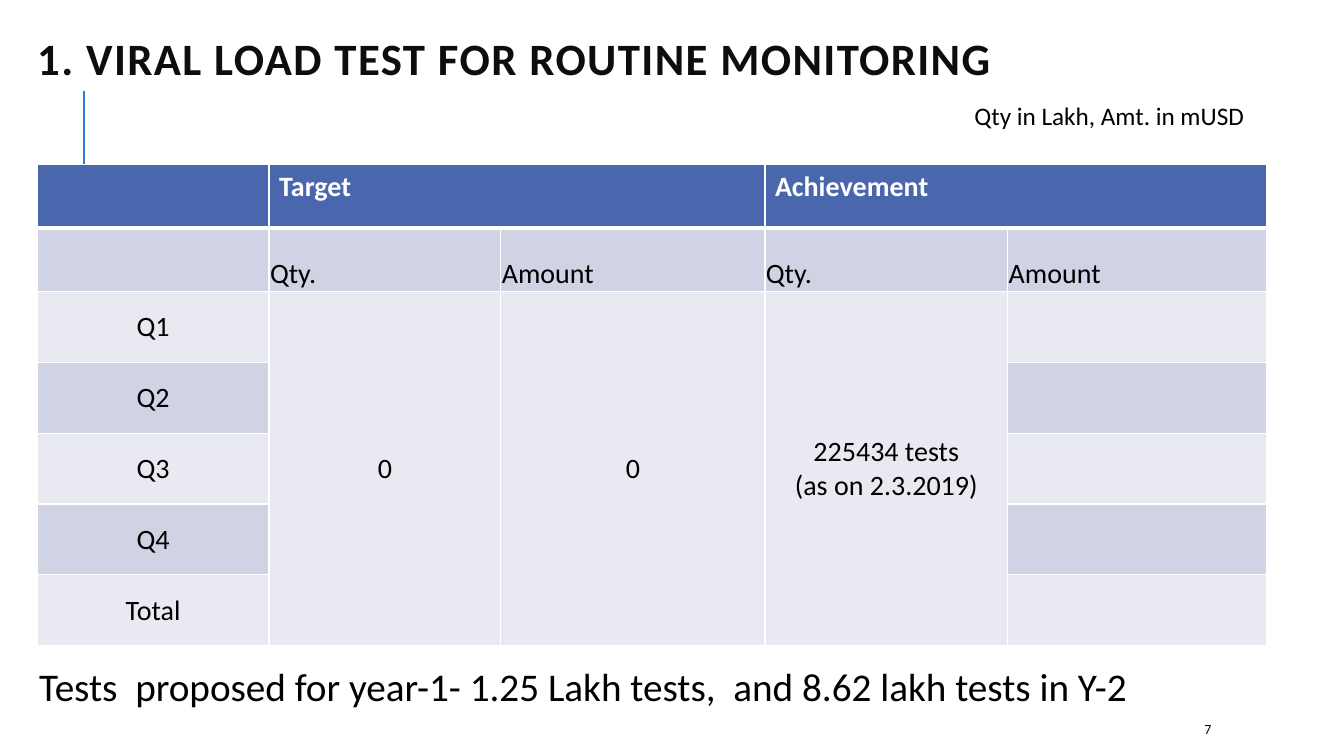
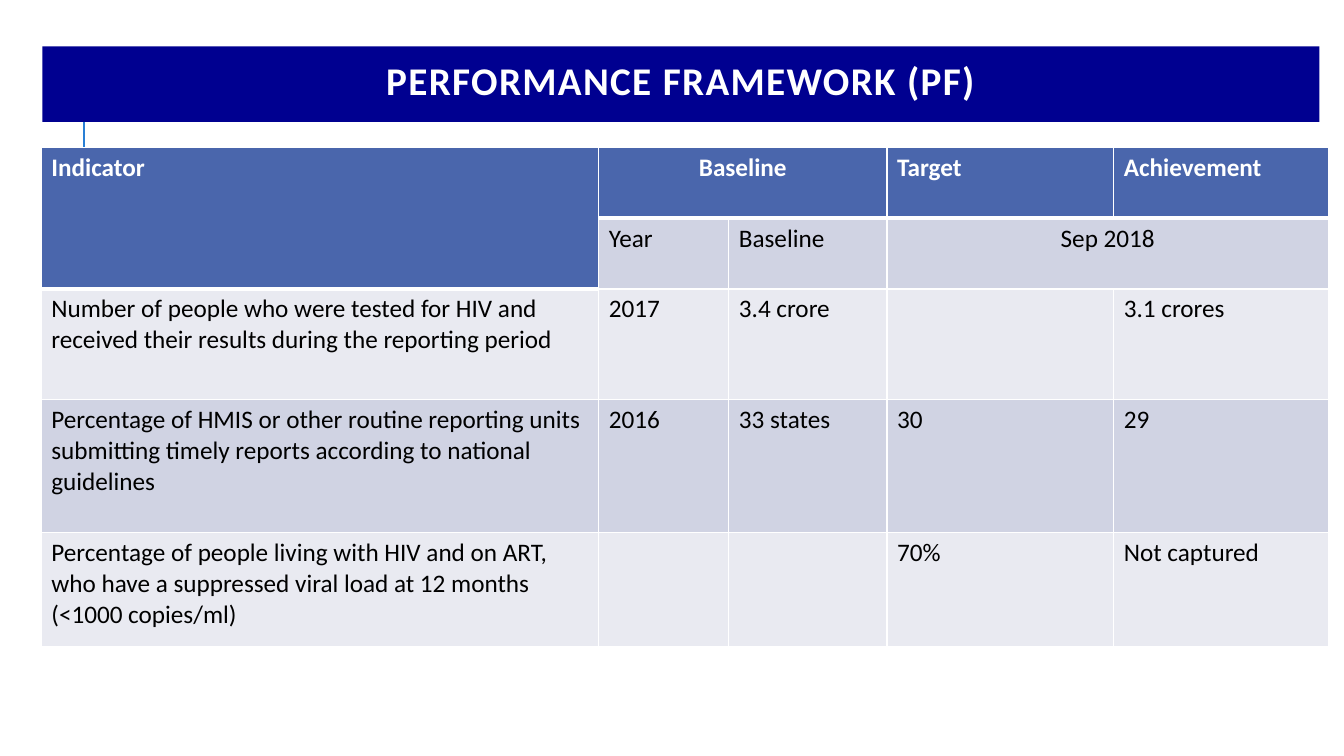
from dataclasses import dataclass

from lxml import etree
from pptx import Presentation
from pptx.dml.color import RGBColor
from pptx.enum import shapes, text
from pptx.oxml import ns
from pptx.util import Pt


# Look of the deck
@dataclass(frozen=True)
class Theme:
    font: str = "Calibri"
    ink: str = "000000"
    soft_ink: str = "0D0D0D"
    white: str = "FFFFFF"
    rule: str = "297FD5"
    banner: str = "000090"
    header: str = "4A66AC"
    bands: tuple = ("E9EAF1", "D0D3E3")
    title: int = 32
    banner_title: int = 28
    summary: int = 28
    large_cell: int = 20
    cell: int = 18
    caption: int = 18
    page_number: int = 10


THEME = Theme()
LEFT, CENTER = text.PP_ALIGN.LEFT, text.PP_ALIGN.CENTER
TOP, MIDDLE, BOTTOM = (text.MSO_ANCHOR.TOP, text.MSO_ANCHOR.MIDDLE,
                       text.MSO_ANCHOR.BOTTOM)

# Cell layouts: anchor, alignment, margins (left, top, right, bottom)
NORMAL = (TOP, LEFT, (7.2, 3.6, 7.2, 3.6))
UNIT = (BOTTOM, LEFT, (0.7, 0.7, 0.7, 0))
FIGURE = (MIDDLE, CENTER, (0.7, 0.7, 0.7, 0))

# Content; every box is left, top, width, height in points
SLIDES = [
    {
        "title": "1. VIRAL LOAD TEST FOR ROUTINE MONITORING",
        "title_box": (19.4, 5.8, 907, 77.8),
        "banner": False,
        "table": {
            "origin": (26.6, 117.4),
            "columns": (165.6, 165.6, 188.6, 173.5, 185),
            "heights": (45.4, 45.4) + (50.6,) * 5,
            "size": THEME.large_cell,
            "layouts": [NORMAL, UNIT] + [FIGURE] * 5,
            "header_depths": (1, 1, 1, 1, 1),
            "centered": (),
            "merges": [(0, 1, 0, 2), (0, 3, 0, 4),
                       (2, 1, 6, 1), (2, 2, 6, 2), (2, 3, 6, 3)],
            "rows": [
                ("", "Target", "", "Achievement", ""),
                ("", "Qty.", "Amount", "Qty.", "Amount"),
                ("Q1", "0", "0", "225434 tests\n(as on 2.3.2019)", ""),
                ("Q2", "", "", "", ""),
                ("Q3", "", "", "", ""),
                ("Q4", "", "", "", ""),
                ("Total", "", "", "", ""),
            ],
        },
        "labels": [
            ("Qty in Lakh, Amt. in mUSD", (689, 68.4, 211.7, 28.8),
             THEME.caption, THEME.ink, TOP),
            ("Tests  proposed for year-1- 1.25 Lakh tests,  and 8.62 lakh tests in Y-2",
             (20.9, 469.4, 882, 41), THEME.summary, THEME.ink, TOP),
            ("7", (853.2, 509.8, 76.3, 21.6),
             THEME.page_number, THEME.soft_ink, MIDDLE),
        ],
    },
    {
        "title": "PERFORMANCE FRAMEWORK (PF)",
        "title_box": (30.2, 33.1, 912.2, 54),
        "banner": True,
        "table": {
            "origin": (29.5, 105.2),
            "columns": (398.2, 92.9, 113, 162, 153.4),
            "heights": (50.6, 50.6, 79.2, 95, 81.6),
            "size": THEME.cell,
            "layouts": [NORMAL] * 5,
            "header_depths": (2, 1, 1, 1, 1),
            "centered": ((0, 1), (1, 3)),
            "merges": [(0, 0, 1, 0), (0, 1, 0, 2), (1, 3, 1, 4)],
            "rows": [
                ("Indicator", "Baseline", "", "Target", "Achievement"),
                ("", "Year", "Baseline", "Sep 2018", ""),
                ("Number of people who were tested for HIV and received their "
                 "results during the reporting period",
                 "2017", "3.4 crore", "", "3.1 crores"),
                ("Percentage of HMIS or other routine reporting units submitting "
                 "timely reports according to national guidelines",
                 "2016", "33 states", "30", "29"),
                ("Percentage of people living with HIV and on ART, who have a "
                 "suppressed viral load at 12 months (<1000 copies/ml)",
                 "", "", "70%", "Not captured"),
            ],
        },
        "labels": [],
    },
]


def points(values):
    return [Pt(value) for value in values]


def paint(target, color):
    target.fill.solid()
    target.fill.fore_color.rgb = RGBColor.from_string(color)


def style_text(frame, size, color, align=LEFT, bold=False):
    for para in frame.paragraphs:
        para.alignment = align
        font = para.font
        font.name, font.size, font.bold = THEME.font, Pt(size), bold
        font.color.rgb = RGBColor.from_string(color)


def place_title(page, content):
    title = page.shapes.title
    title.left, title.top, title.width, title.height = points(content["title_box"])
    frame = title.text_frame
    frame.text = content["title"]
    frame.word_wrap = True
    frame.auto_size = text.MSO_AUTO_SIZE.NONE
    frame.vertical_anchor = MIDDLE
    if content["banner"]:
        paint(title, THEME.banner)
        style_text(frame, THEME.banner_title, THEME.white, CENTER, True)
    else:
        style_text(frame, THEME.title, THEME.soft_ink, LEFT, True)
    para = frame.paragraphs[0]
    para.line_spacing = 0.8
    # Letter spacing of one point
    para.runs[0].font.bold = True
    para.runs[0].element.find(ns.qn("a:rPr")).set("spc", "100") if hasattr(
        para.runs[0], "element") else para.runs[0].font._element.set("spc", "100")


def set_borders(cell, top, bottom):
    properties = cell._tc.get_or_add_tcPr()
    widths = {"a:lnL": 1, "a:lnR": 1, "a:lnT": top, "a:lnB": bottom}
    for position, (tag, width) in enumerate(widths.items()):
        border = etree.Element(ns.qn(tag), w=str(Pt(width)))
        fill = etree.SubElement(border, ns.qn("a:solidFill"))
        etree.SubElement(fill, ns.qn("a:srgbClr"), val=THEME.white)
        properties.insert(position, border)


def add_grid(page, grid):
    columns, heights = points(grid["columns"]), points(grid["heights"])
    table = page.shapes.add_table(
        len(heights), len(columns), *points(grid["origin"]),
        sum(columns), sum(heights)).table
    for column, width in zip(table.columns, columns):
        column.width = width
    for row, height in zip(table.rows, heights):
        row.height = height

    for r, values in enumerate(grid["rows"]):
        anchor, align, margins = grid["layouts"][r]
        for c, value in enumerate(values):
            depth = grid["header_depths"][c]
            is_header = r < depth
            cell = table.cell(r, c)
            cell.text = value
            cell.vertical_anchor = anchor
            (cell.margin_left, cell.margin_top,
             cell.margin_right, cell.margin_bottom) = points(margins)
            paint(cell, THEME.header if is_header else THEME.bands[r % 2])
            set_borders(cell, 3 if r == depth else 1, 3 if is_header else 1)
            style_text(cell.text_frame, grid["size"],
                       THEME.white if is_header else THEME.ink,
                       CENTER if (r, c) in grid["centered"] else align, is_header)

    for first_row, first_column, last_row, last_column in grid["merges"]:
        table.cell(first_row, first_column).merge(table.cell(last_row, last_column))


def add_label(page, wording, place, size, color, anchor):
    box = page.shapes.add_textbox(*points(place))
    frame = box.text_frame
    frame.text = wording
    frame.word_wrap = True
    frame.vertical_anchor = anchor
    style_text(frame, size, color)


def add_master_rule(deck, page):
    # Drawn on a page, then moved to the master that all pages share
    rule = page.shapes.add_connector(
        shapes.MSO_CONNECTOR.STRAIGHT, *points((59.8, 136.8, 59.8, 64.8)))
    rule.line.width = Pt(1.5)
    rule.line.color.rgb = RGBColor.from_string(THEME.rule)
    etree.SubElement(rule.element.spPr, ns.qn("a:effectLst"))
    deck.slide_master.shapes.element.append(rule.element)


def main():
    deck = Presentation()
    deck.slide_width, deck.slide_height = Pt(960), Pt(540)
    title_only = deck.slide_layouts.get_by_name("Title Only")
    for content in SLIDES:
        page = deck.slides.add_slide(title_only)
        place_title(page, content)
        add_grid(page, content["table"])
        for label in content["labels"]:
            add_label(page, *label)
    add_master_rule(deck, deck.slides[0])
    deck.save("out.pptx")


if __name__ == "__main__":
    main()
